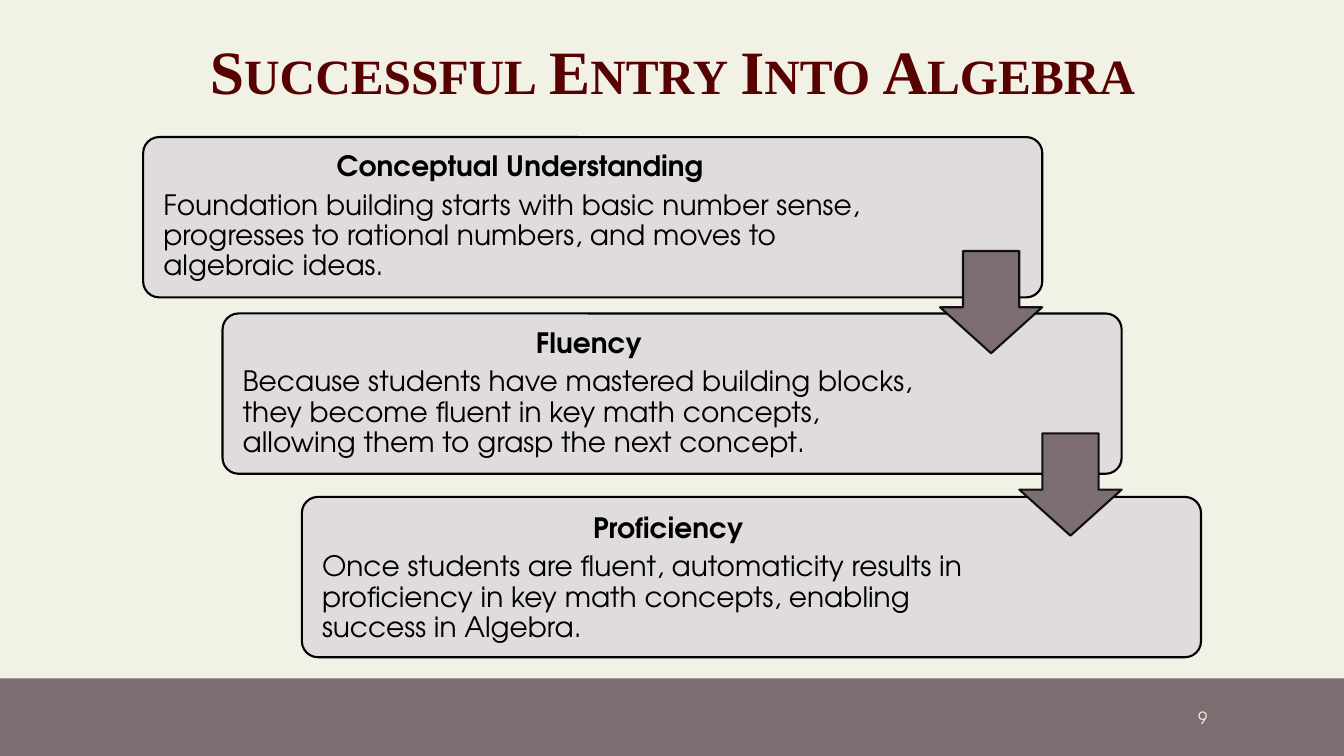
from lxml.etree import SubElement
from pptx import Presentation
from pptx.dml.color import RGBColor
from pptx.enum.shapes import MSO_SHAPE as Shape
from pptx.enum.text import MSO_ANCHOR as Anchor, PP_ALIGN as Align
from pptx.oxml import parse_xml
from pptx.oxml.ns import nsdecls, qn
from pptx.util import Inches, Pt

CREAM = RGBColor(0xF1, 0xF1, 0xE5)
MAUVE = RGBColor(0x7C, 0x6D, 0x72)
PALE = RGBColor(0xE0, 0xDC, 0xDD)
MAROON = RGBColor(0x57, 0x01, 0x00)
IVORY = RGBColor(0xFA, 0xF3, 0xD9)
BLACK = RGBColor(0x00, 0x00, 0x00)
SANS, SERIF = "TeX Gyre Adventor", "Times New Roman"
COLUMNS, ROWS = 160, 90

STEPS = [
    ("Conceptual Understanding",
     "Foundation building starts with basic number sense, progresses to rational "
     "numbers, and moves to algebraic ideas.", 16.32, 86.76, 0.9),
    ("Fluency",
     "Because students have mastered building blocks, they become fluent in key math "
     "concepts, allowing them to grasp the next concept.", 37.32, 84.24, 0.9),
    ("Proficiency",
     "Once students are fluent, automaticity results in proficiency in key math "
     "concepts, enabling success in Algebra.", 59.16, 84.24, 1.0),
]
ARROW_TOPS = [29.88, 51.6]
CARD_LEFT, CARD_SHIFT, CARD_WIDTH, CARD_HEIGHT = 17.04, 9.45, 107.04, 19.08
CARD_INSET, ARROW_SIZE = 0.6, 12.18


class SlideBuilder:
    def __init__(self, deck):
        self.deck = deck
        self.page = deck.slides.add_slide(deck.slide_layouts[5])
        self.page.background.fill.solid()
        self.page.background.fill.fore_color.rgb = CREAM

    def place(self, left, top, width, height):
        column = self.deck.slide_width / COLUMNS
        row = self.deck.slide_height / ROWS
        return (round(left * column), round(top * row),
                round(width * column), round(height * row))

    def style(self, para, font, size, color, bold=False, align=Align.LEFT, spacing=1.0, after=0):
        para.alignment = align
        para.line_spacing = spacing
        para.space_before = Pt(0)
        para.space_after = Pt(after)
        for span in para.runs:
            span.font.color.rgb = color
            span.font.name = font
            span.font.size = Pt(size)
            span.font.bold = bold

    def title(self, text, area):
        box = self.page.shapes.title
        box.left, box.top, box.width, box.height = self.place(*area)
        frame = box.text_frame
        frame.text = text
        frame.word_wrap = True
        frame.vertical_anchor = Anchor.MIDDLE
        para = frame.paragraphs[0]
        self.style(para, SERIF, 44, MAROON, True, Align.CENTER, 0.9)
        props = para.runs[0].font._element
        props.set("cap", "small")
        shadow = parse_xml(
            f'<a:effectLst {nsdecls("a")}><a:outerShdw blurRad="38100" dist="38100" '
            'dir="2700000" algn="tl"><a:srgbClr val="000000"><a:alpha val="43000"/>'
            '</a:srgbClr></a:outerShdw></a:effectLst>')
        props.find(qn("a:solidFill")).addnext(shadow)

    def shape(self, kind, area, fill, adjustments=(), outline=None, opacity=100):
        shape = self.page.shapes.add_shape(kind, *self.place(*area))
        shape.shadow.inherit = False
        shape.fill.solid()
        shape.fill.fore_color.rgb = fill
        for index, value in enumerate(adjustments):
            shape.adjustments[index] = value
        if outline is None:
            shape.line.fill.background()
            return
        shape.line.color.rgb = outline
        shape.line.width = Pt(1.5)
        if opacity < 100:
            color = shape.line._ln.find(qn("a:solidFill"))[0]
            SubElement(color, qn("a:alpha")).set("val", str(opacity * 1000))

    def text(self, area, text, inset=0):
        box = self.page.shapes.add_textbox(*self.place(*area))
        frame = box.text_frame
        frame.word_wrap = True
        frame.vertical_anchor = Anchor.MIDDLE
        frame.margin_left = Inches(inset)
        frame.margin_right = frame.margin_top = frame.margin_bottom = 0
        frame.text = text
        return frame.paragraphs

    def card(self, left, top, heading, detail, text_width, spacing):
        self.shape(Shape.ROUNDED_RECTANGLE, (left, top, CARD_WIDTH, CARD_HEIGHT),
                   PALE, [0.1], BLACK)
        area = (left + CARD_INSET, top + CARD_INSET, text_width, CARD_HEIGHT - 2 * CARD_INSET)
        head, body = self.text(area, f"{heading}\n{detail}", 0.15)
        self.style(head, SANS, 20, BLACK, True, Align.CENTER, spacing, 6)
        self.style(body, SANS, 20, BLACK, spacing=0.9, after=6)

    def page_number(self, number, area):
        para = self.text(area, number)[0]
        self.style(para, SANS, 12, IVORY, align=Align.RIGHT)


def main():
    deck = Presentation()
    deck.slide_width, deck.slide_height = Inches(13.33), Inches(7.5)
    slide = SlideBuilder(deck)
    slide.shape(Shape.RECTANGLE, (0, 80.76, COLUMNS, 9.24), MAUVE)
    slide.title("Successful Entry Into Algebra", (5.4, 0, 149.3, 17.76))
    slide.page_number("9", (122.55, 83.04, 21.2, 4.8))
    for index, (heading, detail, top, text_width, spacing) in enumerate(STEPS):
        slide.card(CARD_LEFT + index * CARD_SHIFT, top, heading, detail, text_width, spacing)
    for index, top in enumerate(ARROW_TOPS):
        left = CARD_LEFT + index * CARD_SHIFT + CARD_WIDTH - ARROW_SIZE
        slide.shape(Shape.DOWN_ARROW, (left, top, ARROW_SIZE, ARROW_SIZE),
                    MAUVE, [0.55, 0.45], BLACK, 90)
    deck.save("out.pptx")


if __name__ == "__main__":
    main()
